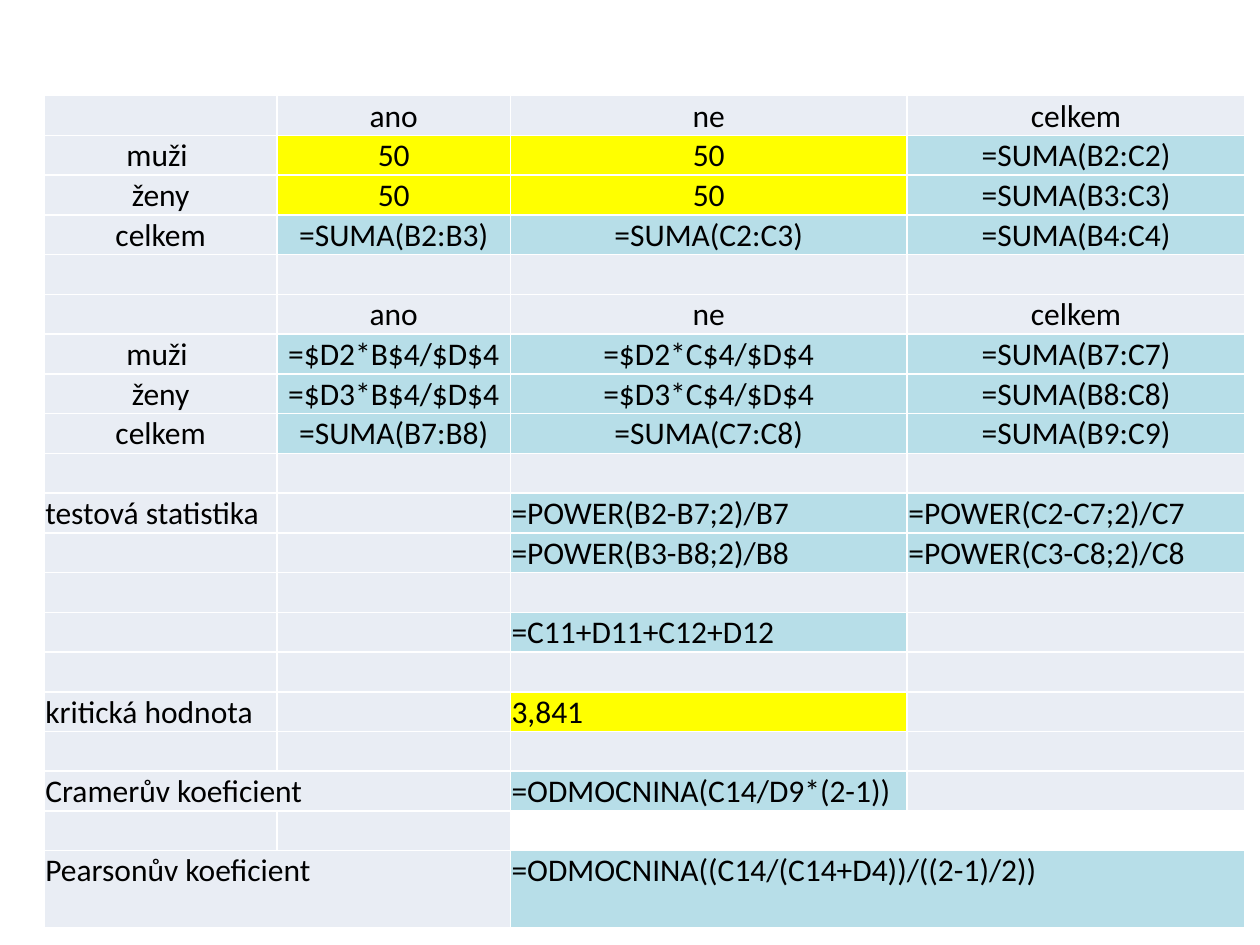
from pptx import Presentation
from pptx.dml.color import RGBColor
from pptx.enum import text
from pptx.util import Inches, Pt

BLACK = RGBColor(0x00, 0x00, 0x00)
PALE = RGBColor(0xE9, 0xED, 0xF4)
INPUT_YELLOW = RGBColor(0xFF, 0xFF, 0x00)
FORMULA_BLUE = RGBColor(0xB7, 0xDE, 0xE8)

LEFT, CENTER = text.PP_ALIGN.LEFT, text.PP_ALIGN.CENTER
TOP, MIDDLE, BOTTOM = (text.MSO_ANCHOR.TOP, text.MSO_ANCHOR.MIDDLE,
                       text.MSO_ANCHOR.BOTTOM)

COLUMN_WIDTHS = [1.85, 1.85, 3.15, 2.68]
LAST_ROW_HEIGHT = 0.61
EMPTY = ["", "", "", ""]
HEADINGS = ["", "ano", "ne", "celkem"]

# Contingency tables: observed, then expected counts
COUNTS = [
    HEADINGS,
    ["muži ", "50", "50", "=SUMA(B2:C2)"],
    ["ženy", "50", "50", "=SUMA(B3:C3)"],
    ["celkem", "=SUMA(B2:B3)", "=SUMA(C2:C3)", "=SUMA(B4:C4)"],
    EMPTY,
    HEADINGS,
    ["muži ", "=$D2*B$4/$D$4", "=$D2*C$4/$D$4", "=SUMA(B7:C7)"],
    ["ženy", "=$D3*B$4/$D$4", "=$D3*C$4/$D$4", "=SUMA(B8:C8)"],
    ["celkem", "=SUMA(B7:B8)", "=SUMA(C7:C8)", "=SUMA(B9:C9)"],
    EMPTY,
]
# Test statistic and critical value
TEST = [
    ["testová statistika", "", "=POWER(B2-B7;2)/B7", "=POWER(C2-C7;2)/C7"],
    ["", "", "=POWER(B3-B8;2)/B8", "=POWER(C3-C8;2)/C8"],
    EMPTY,
    ["", "", "=C11+D11+C12+D12", ""],
    EMPTY,
    ["kritická hodnota", "", "3,841", ""],
    EMPTY,
]
# Coefficients; None leaves a cell unfilled
COEFFICIENTS = [
    ["Cramerův koeficient", "", "=ODMOCNINA(C14/D9*(2-1))", ""],
    ["", "", None, None],
    ["Pearsonův koeficient", "", "=ODMOCNINA((C14/(C14+D4))/((2-1)/2))", ""],
]


def write(cell, words, align=LEFT, anchor=TOP, size=18, font="Calibri", color=BLACK):
    cell.margin_left = cell.margin_right = cell.margin_top = Inches(0.01)
    cell.margin_bottom = 0
    cell.vertical_anchor = anchor
    paragraph = cell.text_frame.paragraphs[0]
    paragraph.alignment = align
    paragraph.font.size = Pt(size)
    if words:
        run = paragraph.add_run()
        run.text = words
        run.font.size = Pt(size)
        run.font.name = font
        run.font.color.rgb = color


def paint(cell, words):
    """Formulas are blue, entered numbers yellow, everything else pale."""
    if words is None:
        cell.fill.background()
        return
    cell.fill.solid()
    if words.startswith("="):
        cell.fill.fore_color.rgb = FORMULA_BLUE
    elif words[:1].isdigit():
        cell.fill.fore_color.rgb = INPUT_YELLOW
    else:
        cell.fill.fore_color.rgb = PALE


def add_calculation(slide, left, top, width, height):
    rows = COUNTS + TEST + COEFFICIENTS
    table = slide.shapes.add_table(
        len(rows), len(COLUMN_WIDTHS), Inches(left), Inches(top),
        Inches(width), Inches(height)).table
    table.first_row = table.horz_banding = False

    for column, column_width in zip(table.columns, COLUMN_WIDTHS):
        column.width = Inches(column_width)
    for row in table.rows:
        row.height = Inches((height - LAST_ROW_HEIGHT) / (len(rows) - 1))
    table.rows[len(rows) - 1].height = Inches(LAST_ROW_HEIGHT)

    # Each section has its own alignment
    sections = [(COUNTS, CENTER, MIDDLE), (TEST, LEFT, BOTTOM),
                (COEFFICIENTS, LEFT, TOP)]
    r = 0
    for section, align, anchor in sections:
        for entries in section:
            for c, words in enumerate(entries):
                cell = table.cell(r, c)
                write(cell, words, align=align, anchor=anchor)
                paint(cell, words)
            r += 1
    table.cell(len(COUNTS), 0).vertical_anchor = MIDDLE

    # Labels and the long formula run across two columns
    cramer, pearson = len(rows) - 3, len(rows) - 1
    for r, c in [(cramer, 0), (pearson, 0), (pearson, 2)]:
        table.cell(r, c).merge(table.cell(r, c + 1))


def main():
    deck = Presentation()
    deck.slide_width, deck.slide_height = Inches(10), Inches(7.5)
    slide = deck.slides.add_slide(deck.slide_layouts[6])
    add_calculation(slide, 0.35, 0.76, sum(COLUMN_WIDTHS), 6.54)
    deck.save("out.pptx")


if __name__ == "__main__":
    main()
